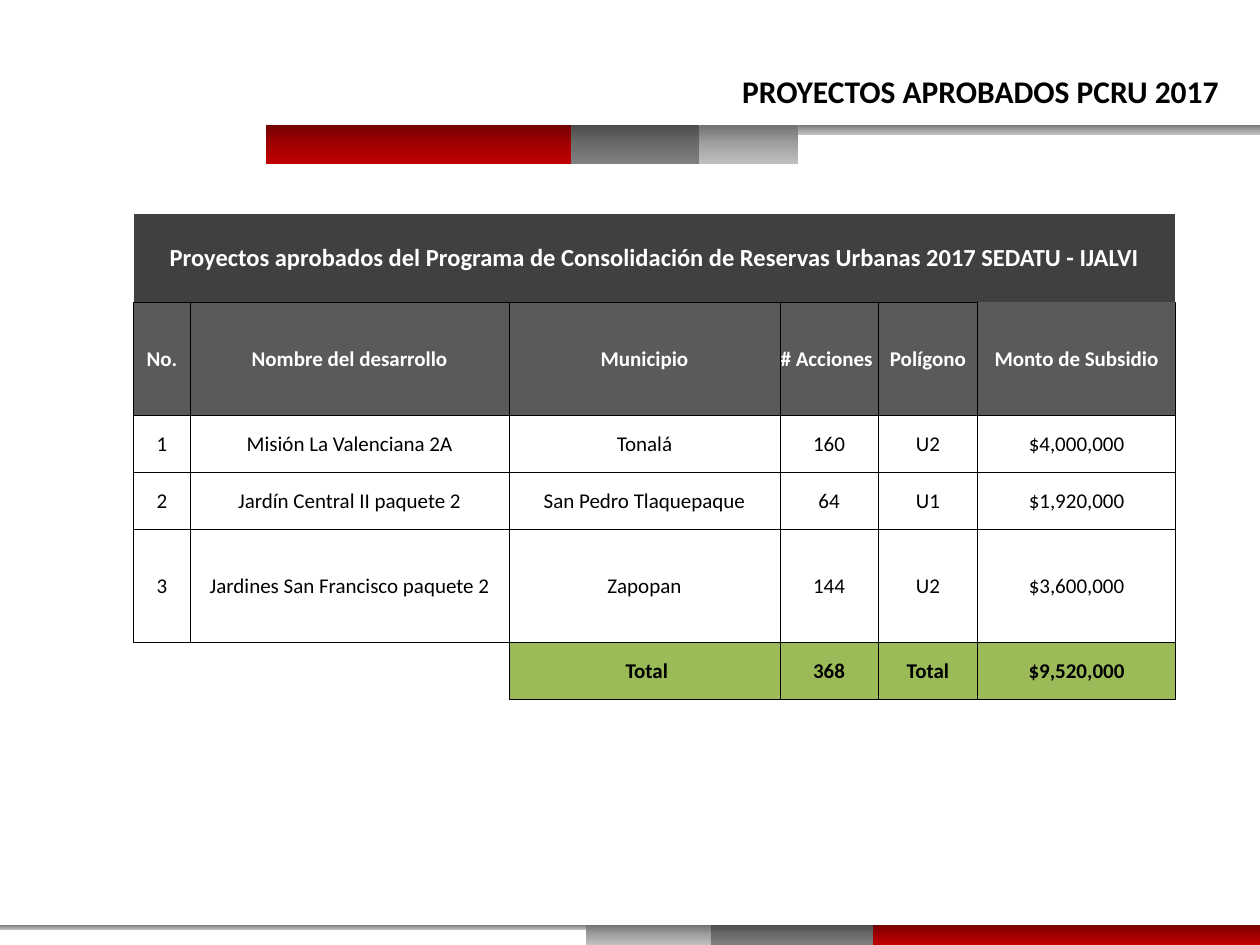
"""Build the slide of housing projects approved under PCRU 2017."""
from copy import deepcopy

from lxml.etree import SubElement
from pptx import Presentation
from pptx.dml.color import RGBColor
from pptx.enum.shapes import MSO_SHAPE
from pptx.enum.text import MSO_ANCHOR, MSO_AUTO_SIZE, PP_ALIGN
from pptx.oxml.ns import qn
from pptx.util import Inches, Pt

COLORS = {
    "black": "000000", "white": "FFFFFF",
    "banner": "404040", "header": "5A5A5A", "total": "9BBB59",
}
GRADIENTS = {
    "red": ("720000", "A20000", "C00000"),
    "dark": ("4C4C4C", "6B6B6B", "808080"),
    "light": ("717171", "A1A1A1", "BFBFBF"),
}
HEADER_TOP, FOOTER_TOP = 0.99, 7.34
STRIPS = [
    [("red", 2.11, 2.5, 0.31), ("dark", 4.53, 1.02, 0.31),
     ("light", 5.55, 0.78, 0.31), ("light", 6.33, 3.67, 0.08)],
    [("red", 6.83, 3.17, 0.16), ("dark", 5.64, 1.29, 0.16),
     ("light", 4.65, 0.99, 0.16), ("light", 0, 4.65, 0.04)],
]
COLUMNS = [0.45, 2.53, 2.15, 0.78, 0.79, 1.57]
ROW_UNIT = 0.45
ROWS = [0.7] + [ROW_UNIT * units for units in (2, 1, 1, 2, 1)]
PROJECTS = [
    ["Proyectos aprobados del Programa de Consolidación de Reservas Urbanas 2017 SEDATU - IJALVI",
     "", "", "", "", ""],
    ["No.", "Nombre del desarrollo", "Municipio", "# Acciones ", "Polígono", "Monto de Subsidio"],
    ["1", "Misión La Valenciana 2A", "Tonalá", "160", "U2", "$4,000,000"],
    ["2", "Jardín Central II paquete 2", "San Pedro Tlaquepaque", "64", "U1", "$1,920,000"],
    ["3", "Jardines San Francisco paquete 2", "Zapopan", "144", "U2", "$3,600,000"],
    ["", "", " Total", "368", "Total", "$9,520,000"],
]
ROW_FILLS = ["banner", "header", None, None, None, "total"]
ROW_INKS = ["white", "white", "black", "black", "black", "black"]
BORDERED_SIDES = {(0, 0): "B", (1, 5): "LRB", (5, 0): "T", (5, 1): "RT"}


def add_run(paragraph, text, size, ink, bold):
    run = paragraph.add_run()
    run.text = text
    run.font.name = "Calibri"
    run.font.size = Pt(size)
    run.font.bold = bold
    run.font.color.rgb = RGBColor.from_string(COLORS[ink])


def set_borders(cell, sides):
    properties = cell._tc.get_or_add_tcPr()
    for position, side in enumerate("LRTB"):
        line = SubElement(properties, qn(f"a:ln{side}"), w=str(Pt(0.5)))
        properties.insert(position, line)
        if side in sides:
            paint = SubElement(line, qn("a:solidFill"))
            SubElement(paint, qn("a:srgbClr"), val=COLORS["black"])
        else:
            SubElement(line, qn("a:noFill"))


prs = Presentation()
prs.slide_width, prs.slide_height = Inches(10), Inches(7.5)
slide = prs.slides.add_slide(prs.slide_layouts[5])

for top, strips in zip((HEADER_TOP, FOOTER_TOP), STRIPS):
    band = slide.shapes.add_group_shape()
    for tone, left, width, height in strips:
        strip = band.shapes.add_shape(
            MSO_SHAPE.RECTANGLE, Inches(left), Inches(top), Inches(width), Inches(height))
        strip.shadow.inherit = False
        strip.line.fill.background()
        strip.fill.gradient()
        strip.fill.gradient_angle = 270
        stop_list = strip.element.find(".//" + qn("a:gsLst"))
        stop_list.insert(1, deepcopy(stop_list[0]))
        for stop, position, shade in zip(strip.fill.gradient_stops, (0, 0.5, 1), GRADIENTS[tone]):
            stop.position = position
            stop.color.rgb = RGBColor.from_string(shade)

projects = slide.shapes.add_table(
    len(ROWS), len(COLUMNS), Inches(1.06), Inches(1.7),
    Inches(sum(COLUMNS)), Inches(sum(ROWS))).table
projects.first_row = projects.horz_banding = False
for column, width in zip(projects.columns, COLUMNS):
    column.width = Inches(width)
for row, height in zip(projects.rows, ROWS):
    row.height = Inches(height)
projects.cell(0, 0).merge(projects.cell(0, len(COLUMNS) - 1))

for r, entries in enumerate(PROJECTS):
    for c, entry in enumerate(entries):
        cell = projects.cell(r, c)
        cell.margin_left = cell.margin_right = cell.margin_top = cell.margin_bottom = 0
        cell.vertical_anchor = MSO_ANCHOR.MIDDLE
        if ROW_FILLS[r] and (entry or cell.is_spanned):
            cell.fill.solid()
            cell.fill.fore_color.rgb = RGBColor.from_string(COLORS[ROW_FILLS[r]])
        else:
            cell.fill.background()
        set_borders(cell, BORDERED_SIDES.get((r, c), "" if r == 0 else "LRTB"))
        if entry:
            paragraph = cell.text_frame.paragraphs[0]
            paragraph.alignment = PP_ALIGN.CENTER
            add_run(paragraph, entry, 14 if r == 0 else 12, ROW_INKS[r], ROW_FILLS[r] is not None)

title = slide.shapes.title
title.left, title.top, title.width, title.height = map(Inches, (5.79, 0.52, 4.03, 0.4))
heading = title.text_frame
heading.word_wrap = False
heading.auto_size = MSO_AUTO_SIZE.SHAPE_TO_FIT_TEXT
heading.vertical_anchor = MSO_ANCHOR.TOP
heading.paragraphs[0].alignment = PP_ALIGN.LEFT
add_run(heading.paragraphs[0], "PROYECTOS APROBADOS PCRU 2017", 18, "black", True)

prs.save("out.pptx")
